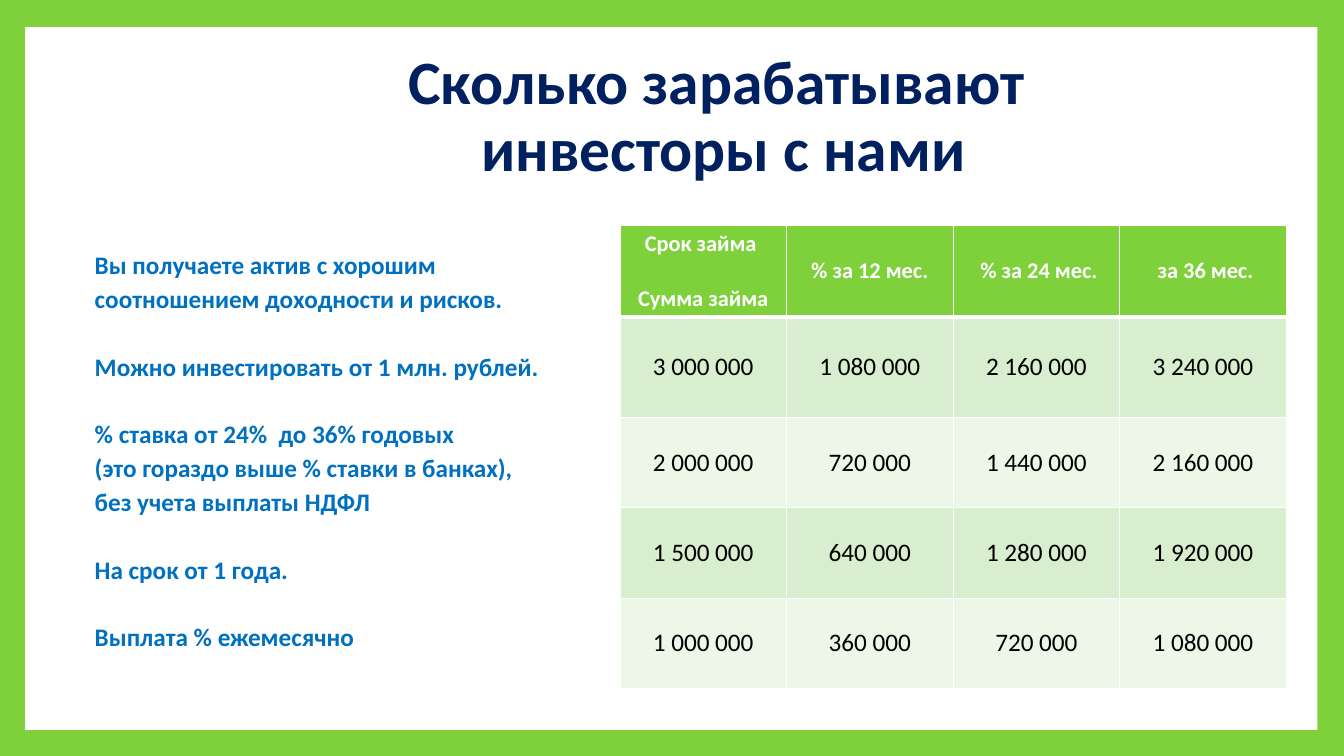
from dataclasses import dataclass
from typing import Any

from lxml import etree
from pptx import Presentation
from pptx.dml.color import RGBColor
from pptx.enum import shapes, text
from pptx.oxml import ns
from pptx.util import Pt

GREEN = RGBColor(0x7F, 0xD1, 0x3B)
MINT = RGBColor(0xD8, 0xEE, 0xCE)
PALE = RGBColor(0xEC, 0xF7, 0xE8)
WHITE = RGBColor(0xFF, 0xFF, 0xFF)
BLACK = RGBColor(0, 0, 0)
NAVY = RGBColor(0x00, 0x20, 0x60)
BLUE = RGBColor(0x00, 0x70, 0xC0)
CENTER = text.PP_ALIGN.CENTER
LEFT = text.PP_ALIGN.LEFT
MIDDLE = text.MSO_ANCHOR.MIDDLE


@dataclass(frozen=True)
class Style:
    size: float
    color: RGBColor
    bold: bool = True
    align: Any = CENTER
    spacing: float = 1.0


TITLE = Style(44, NAVY, spacing=0.9)
NOTE = Style(18, BLUE, align=LEFT, spacing=0.9)
HEAD = Style(16, WHITE)
BODY = Style(18, BLACK, bold=False)

GROUPS = [
    ["Вы получаете актив с хорошим", "соотношением доходности и рисков."],
    ["Можно инвестировать от 1 млн. рублей."],
    ["% ставка от 24%  до 36% годовых",
     "(это гораздо выше % ставки в банках),",
     "без учета выплаты НДФЛ"],
    ["На срок от 1 года."],
    ["Выплата % ежемесячно"],
]
LOANS = [
    ["Срок займа \nСумма займа", " % за 12 мес. ", " % за 24 мес.", " за 36 мес."],
    ["3 000 000", "1 080 000", "2 160 000", "3 240 000"],
    ["2 000 000", "720 000", "1 440 000", "2 160 000"],
    ["1 500 000", "640 000", "1 280 000", "1 920 000"],
    ["1 000 000", "360 000", "720 000", "1 080 000"],
]
ROWS = [65, 72, 64.5, 64.5, 64.5]
COL = 119


def assign(item: Any, values: dict[str, Any]) -> None:
    for name, value in values.items():
        setattr(item, name, value)


def format_text(frame: Any, style: Style) -> None:
    for para in frame.paragraphs:
        assign(para, {"alignment": style.align, "line_spacing": style.spacing})
        for run in para.runs:
            assign(run.font, {"name": "Calibri", "size": Pt(style.size),
                              "bold": style.bold})
            run.font.color.rgb = style.color


def add_edges(cell: Any, base: float) -> None:
    """Draw white cell borders, the bottom one `base` points wide."""
    props = cell._tc.get_or_add_tcPr()
    for tag, width in (("lnL", 1), ("lnR", 1), ("lnT", 1), ("lnB", base)):
        line = etree.SubElement(props, ns.qn(f"a:{tag}"), w=str(Pt(width)))
        fill = etree.SubElement(line, ns.qn("a:solidFill"))
        etree.SubElement(fill, ns.qn("a:srgbClr"), val=str(WHITE))


def add_panel(slide: Any) -> None:
    panel = slide.shapes.add_shape(shapes.MSO_SHAPE.RECTANGLE,
                                   Pt(18), Pt(19.4), Pt(923), Pt(502))
    panel.shadow.inherit = False
    panel.fill.solid()
    panel.fill.fore_color.rgb = WHITE
    panel.line.fill.background()
    slide.shapes.element.insert(2, panel.element)


def add_title(slide: Any) -> None:
    title = slide.shapes.title
    assign(title, {"left": Pt(128.2), "top": Pt(31), "width": Pt(777.6),
                   "height": Pt(106.6)})
    frame = title.text_frame
    frame.text = "Сколько зарабатывают \vинвесторы с нами"
    frame.vertical_anchor = MIDDLE
    format_text(frame, TITLE)


def add_notes(slide: Any) -> None:
    box = slide.shapes.add_textbox(Pt(56.9), Pt(177.1), Pt(380), Pt(321))
    frame = box.text_frame
    assign(frame, {"word_wrap": True, "margin_left": Pt(10.8)})
    frame.text = "\n".join(line for group in GROUPS for line in group)
    format_text(frame, NOTE)
    gaps = [4.6 if i else 29 for group in GROUPS for i in range(len(group))]
    for para, gap in zip(frame.paragraphs[1:], gaps[1:]):
        para.space_before = Pt(gap)


def add_loans(slide: Any) -> None:
    table = slide.shapes.add_table(len(LOANS), len(LOANS[0]), Pt(442.8), Pt(161.3),
                                   Pt(COL * len(LOANS[0])), Pt(sum(ROWS))).table
    table.horz_banding = False
    for col in table.columns:
        col.width = Pt(COL)
    for r, (height, words) in enumerate(zip(ROWS, LOANS)):
        table.rows[r].height = Pt(height)
        tint = GREEN if r == 0 else MINT if r % 2 else PALE
        for c, word in enumerate(words):
            cell = table.cell(r, c)
            assign(cell, {"text": word, "vertical_anchor": MIDDLE,
                          "margin_top": 0, "margin_bottom": 0})
            add_edges(cell, 1 if r else 3)
            cell.fill.solid()
            cell.fill.fore_color.rgb = tint
            format_text(cell.text_frame, BODY if r else HEAD)
    table.cell(0, 0).text_frame.paragraphs[1].space_before = Pt(19.5)


def main() -> None:
    deck = Presentation()
    assign(deck, {"slide_width": Pt(960), "slide_height": Pt(540)})
    slide = deck.slides.add_slide(deck.slide_layouts[5])
    back = slide.background.fill
    back.solid()
    back.fore_color.rgb = GREEN
    add_panel(slide)
    add_title(slide)
    add_loans(slide)
    add_notes(slide)
    deck.save("out.pptx")


if __name__ == "__main__":
    main()
